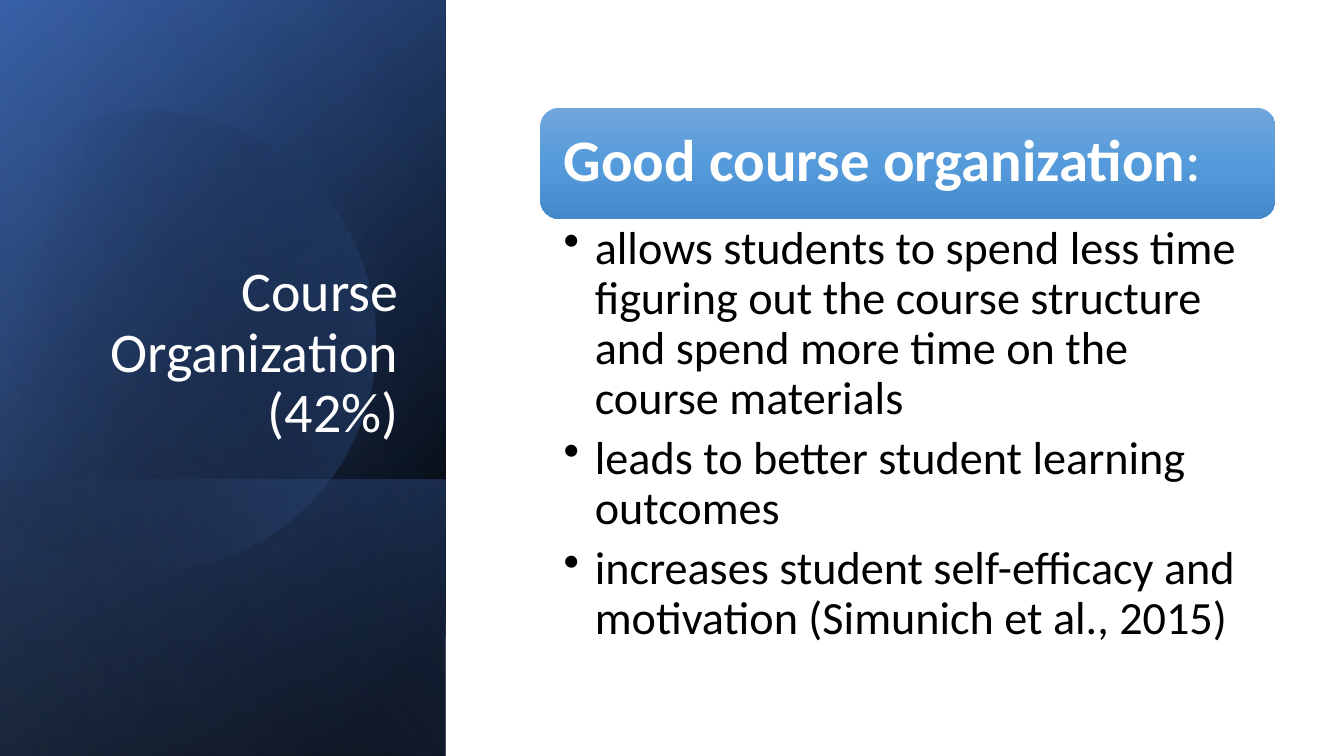
"""Build the course organization slide."""
import math

from lxml import etree
from pptx import Presentation
from pptx.dml.color import RGBColor
from pptx.enum.shapes import MSO_SHAPE
from pptx.enum.text import MSO_ANCHOR, PP_ALIGN
from pptx.oxml.ns import qn
from pptx.util import Inches, Pt

RECTANGLE = MSO_SHAPE.RECTANGLE
ROUNDED = MSO_SHAPE.ROUNDED_RECTANGLE
TOP, MIDDLE, BOTTOM = MSO_ANCHOR.TOP, MSO_ANCHOR.MIDDLE, MSO_ANCHOR.BOTTOM
LEFT, RIGHT = PP_ALIGN.LEFT, PP_ALIGN.RIGHT

BLACK = RGBColor(0x00, 0x00, 0x00)
WHITE = RGBColor(0xFF, 0xFF, 0xFF)
NAVY = RGBColor(0x2F, 0x55, 0x97)
BLUE = RGBColor(0x44, 0x72, 0xC4)
PALE_BLUE = RGBColor(0x8F, 0xAA, 0xDC)
HEADER_LIGHT = RGBColor(0x71, 0xA6, 0xDB)
HEADER_MID = RGBColor(0x55, 0x9B, 0xDB)
HEADER_DARK = RGBColor(0x44, 0x8A, 0xCA)

FONT = "Calibri"
PANEL = (-1.54, 1.54, 7.5, 4.42)
PANEL_LAYERS = [
    (PANEL, 50, [(8, BLACK, 100), (100, NAVY, 100)]),
    (PANEL, 30, [(0, BLACK, 0), (99, BLUE, 46)]),
    ((0.84, 3.92, 2.74, 4.42), 130, [(2, BLUE, 29), (100, BLACK, 30)]),
]
PANEL_SHEEN = (PANEL, 120, [(0, BLACK, 0), (99, PALE_BLUE, 11)])

DISC_TILT = 343.9
DISC_CENTER = (1.59, 3.35)
DISC_START = (1.49, 1.1)
DISC_CURVES = [
    [(2.46, 1.12), (3.35, 1.77), (3.63, 2.75)],
    [(3.98, 3.97), (3.28, 5.23), (2.07, 5.58)],
    [(1.31, 5.8), (0.53, 5.61), (-0.03, 5.14)],
    [(-0.15, 5.03)],
    [(-0.15, 1.75)],
    [(0, 1.61)],
    [(0.23, 1.42), (0.5, 1.28), (0.8, 1.19)],
    [(1.03, 1.13), (1.26, 1.1), (1.49, 1.1)],
]
CURVE_STEPS = 20

BENEFITS = [
    "allows students to spend less time figuring out the course structure "
    "and spend more time on the course materials",
    "leads to better student learning outcomes",
    "increases student self-efficacy and motivation (Simunich et al., 2015)",
]


def paint_gradient(shape, angle, stops):
    """Give a shape a linear gradient of (position, colour, opacity) stops."""
    shape.shadow.inherit = False
    shape.line.fill.background()
    shape.fill.background()
    gradient = etree.Element(qn("a:gradFill"), rotWithShape="1")
    stop_list = etree.SubElement(gradient, qn("a:gsLst"))
    for position, color, opacity in stops:
        stop = etree.SubElement(stop_list, qn("a:gs"), pos=str(position * 1000))
        tint = etree.SubElement(stop, qn("a:srgbClr"), val=str(color))
        if opacity < 100:
            etree.SubElement(tint, qn("a:alpha"), val=str(opacity * 1000))
    etree.SubElement(gradient, qn("a:lin"), ang=str(angle * 60000), scaled="0")
    properties = shape.element.spPr
    properties.replace(properties.find(qn("a:noFill")), gradient)


def add_block(page, kind, place, angle, stops):
    """Add a preset shape with a gradient fill."""
    block = page.shapes.add_shape(kind, *map(Inches, place))
    paint_gradient(block, angle, stops)
    return block


def add_panel_layer(page, place, angle, stops):
    """Add one mirrored, quarter-turned layer of the dark panel."""
    layer = add_block(page, RECTANGLE, place, angle, stops)
    layer.rotation = 90
    layer.element.spPr.xfrm.set("flipH", "1")


def curve_points(start, first, second, end):
    """Return points along a cubic curve, without its start."""
    points = []
    for step in range(1, CURVE_STEPS + 1):
        t = step / CURVE_STEPS
        weights = ((1 - t) ** 3, 3 * t * (1 - t) ** 2, 3 * t * t * (1 - t), t ** 3)
        corners = (start, first, second, end)
        points.append(tuple(
            sum(weight * corner[axis] for weight, corner in zip(weights, corners))
            for axis in (0, 1)))
    return points


def untilt(point):
    """Turn a point back about the disc's centre by the disc's tilt."""
    turn = math.radians(-DISC_TILT)
    across, down = point[0] - DISC_CENTER[0], point[1] - DISC_CENTER[1]
    return (Inches(DISC_CENTER[0] + across * math.cos(turn) - down * math.sin(turn)),
            Inches(DISC_CENTER[1] + across * math.sin(turn) + down * math.cos(turn)))


def add_disc(page):
    """Add the faint cut-off disc on the panel."""
    outline = [DISC_START]
    for segment in DISC_CURVES:
        outline += curve_points(outline[-1], *segment) if len(segment) == 3 else segment
    points = [untilt(point) for point in outline]
    builder = page.shapes.build_freeform(*points[0])
    builder.add_line_segments(points[1:], close=True)
    disc = builder.convert_to_shape()
    disc.rotation = DISC_TILT
    paint_gradient(disc, 30, [(29, BLACK, 0), (100, BLUE, 43)])


def add_text(page, place, paragraphs, size, color, anchor, margins, align=LEFT):
    """Add a wrapped text box and return its paragraphs."""
    frame = page.shapes.add_textbox(*map(Inches, place)).text_frame
    frame.word_wrap = True
    frame.vertical_anchor = anchor
    (frame.margin_left, frame.margin_top,
     frame.margin_right, frame.margin_bottom) = map(Inches, margins)
    frame.text = "\n".join(paragraphs)
    for para in frame.paragraphs:
        para.alignment = align
        para.line_spacing = 0.9
        para.font.name = FONT
        para.font.size = Pt(size)
        para.font.color.rgb = color
    return frame.paragraphs


def add_bullet(para):
    """Give a paragraph a hanging bullet and space after it."""
    para.space_after = Pt(7.5)
    properties = para._p.get_or_add_pPr()
    properties.set("marL", str(Inches(0.31)))
    properties.set("indent", str(Inches(-0.31)))
    bullet = etree.Element(qn("a:buChar"), char="•")
    properties.find(qn("a:defRPr")).addprevious(bullet)


def main():
    """Build and save the slide."""
    deck = Presentation()
    deck.slide_width, deck.slide_height = Inches(13.33), Inches(7.5)
    page = deck.slides.add_slide(deck.slide_layouts[6])

    for layer in PANEL_LAYERS:
        add_panel_layer(page, *layer)
    add_disc(page)
    add_panel_layer(page, *PANEL_SHEEN)
    add_text(page, (0.64, 1.84, 3.41, 2.62), ["Course Organization (42%)"],
             40, WHITE, BOTTOM, (0.1, 0.05, 0.1, 0.05), RIGHT)

    add_block(page, ROUNDED, (5.36, 1.07, 7.29, 1.1), 90,
              [(0, HEADER_LIGHT, 100), (50, HEADER_MID, 100), (100, HEADER_DARK, 100)])
    heading = add_text(page, (5.42, 1.12, 7.18, 0.99), ["Good course organization"],
                       42, WHITE, MIDDLE, (0.17,) * 4)[0]
    heading.runs[0].font.bold = True
    heading.add_run().text = ":"

    for para in add_text(page, (5.36, 2.17, 7.29, 4.37), BENEFITS,
                         33, BLACK, TOP, (0.23, 0.06, 0.33, 0.06)):
        add_bullet(para)
    deck.save("out.pptx")


if __name__ == "__main__":
    main()
